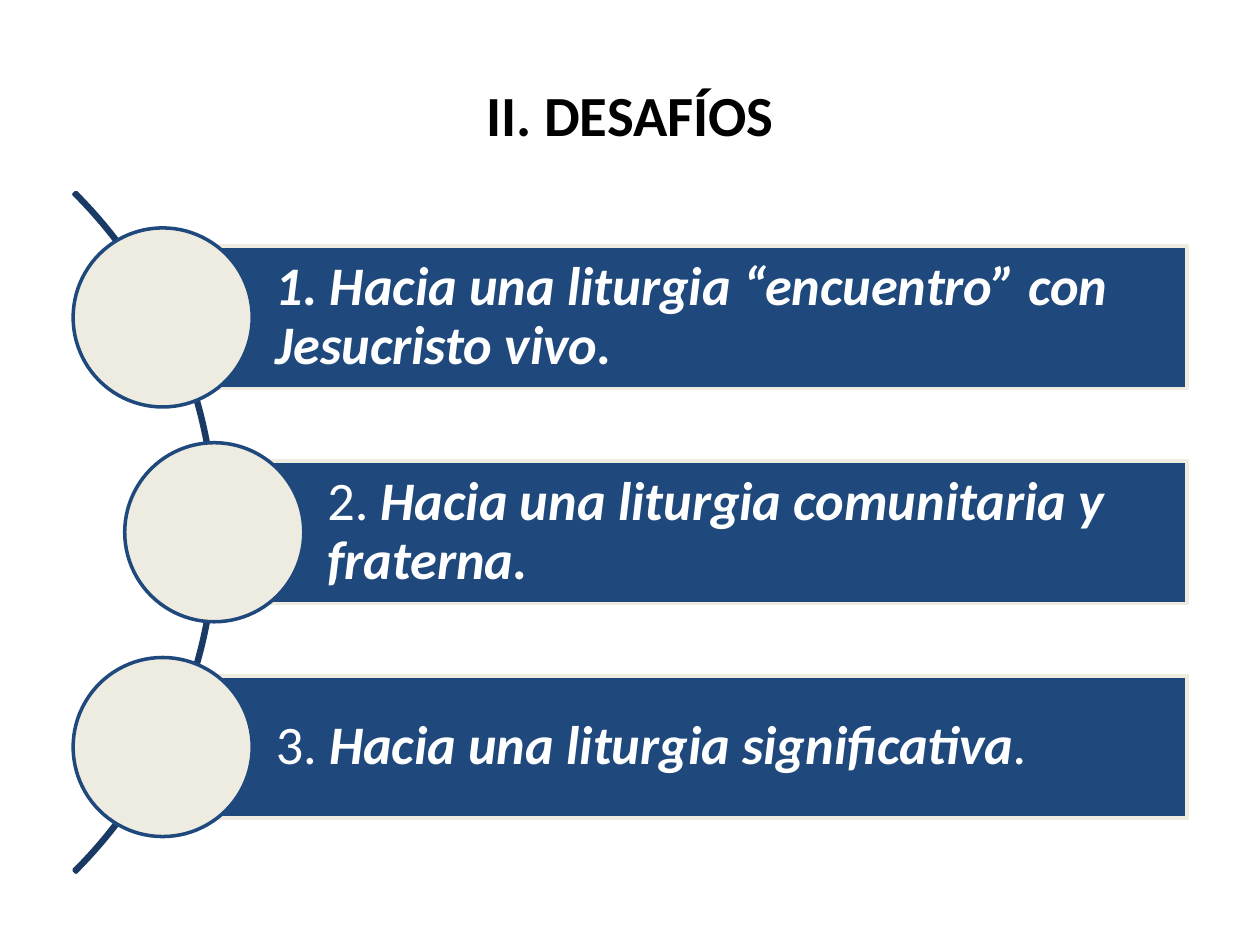
from dataclasses import dataclass

from pptx import Presentation
from pptx.dml.color import RGBColor
from pptx.enum.shapes import MSO_SHAPE as Shape
from pptx.enum.text import MSO_ANCHOR as Anchor, PP_ALIGN as Align
from pptx.util import Cm, Pt

COLORS = {"navy": "1F497D", "arc": "193A64", "cream": "EEECE1",
          "white": "FFFFFF", "black": "000000"}
PLAIN = {"name": "Calibri", "size": Pt(31), "bold": False, "italic": False}
STRONG = {**PLAIN, "bold": True, "italic": True}
TITLE = {**PLAIN, "size": Pt(32.4), "bold": True}

ARC_X, MID_Y, ARC_R = -5.32, 10.73, 9.69
PITCH, BAR_RIGHT, BAR_H, CIRCLE_D = 4.33, 23.93, 2.87, 3.61


@dataclass
class Challenge:
    x: float
    runs: list[tuple[str, dict]]


CHALLENGES = [
    Challenge(3.28, [("1. Hacia una liturgia “encuentro” con Jesucristo vivo.", STRONG)]),
    Challenge(4.32, [("2. ", PLAIN), ("Hacia una liturgia comunitaria y fraterna.", STRONG)]),
    Challenge(3.28, [("3. ", PLAIN), ("Hacia una liturgia significativa", STRONG),
                     (".", {**STRONG, "bold": False})]),
]


def rgb(name: str) -> RGBColor:
    return RGBColor.from_string(COLORS[name])


def add_run(p, text: str, font: dict, color: str) -> None:
    r = p.add_run()
    r.text = text
    for key, value in font.items():
        setattr(r.font, key, value)
    r.font.color.rgb = rgb(color)


def add_outlined(s, kind, x: float, y: float, w: float, h: float, line: str, fill: str = ""):
    sp = s.shapes.add_shape(kind, Cm(x), Cm(y), Cm(w), Cm(h))
    sp.shadow.inherit = False
    if fill:
        sp.fill.solid()
        sp.fill.fore_color.rgb = rgb(fill)
    else:
        sp.fill.background()
    sp.line.color.rgb = rgb(line)
    sp.line.width = Pt(2)
    return sp


def add_title(s, text: str) -> None:
    tf = s.shapes.add_textbox(Cm(1.27), Cm(0.7), Cm(22.86), Cm(3.18)).text_frame
    tf.word_wrap = True
    tf.vertical_anchor = Anchor.MIDDLE
    p = tf.paragraphs[0]
    p.alignment = Align.CENTER
    add_run(p, text, TITLE, "black")


def add_arc(s) -> None:
    sp = add_outlined(s, Shape.BLOCK_ARC, ARC_X - ARC_R, MID_Y - ARC_R,
                      2 * ARC_R, 2 * ARC_R, "arc")
    for i, value in enumerate((189, 27, 0.003)):
        sp.adjustments[i] = value


def add_challenge(s, item: Challenge, y: float) -> None:
    sp = add_outlined(s, Shape.RECTANGLE, item.x, y - BAR_H / 2,
                      BAR_RIGHT - item.x, BAR_H, "cream", "navy")
    tf = sp.text_frame
    frame = {"word_wrap": True, "vertical_anchor": Anchor.MIDDLE, "margin_left": Cm(2.28),
             "margin_right": Cm(0.22), "margin_top": Cm(0.22), "margin_bottom": Cm(0.22)}
    for key, value in frame.items():
        setattr(tf, key, value)
    p = tf.paragraphs[0]
    p.alignment = Align.LEFT
    p.line_spacing = 0.9
    for text, font in item.runs:
        add_run(p, text, font, "white")
    add_outlined(s, Shape.OVAL, item.x - CIRCLE_D / 2, y - CIRCLE_D / 2,
                 CIRCLE_D, CIRCLE_D, "navy", "cream")


def main() -> None:
    prs = Presentation()
    prs.slide_width, prs.slide_height = Cm(25.4), Cm(19.05)
    s = prs.slides.add_slide(prs.slide_layouts[6])
    add_title(s, "II. DESAFÍOS")
    add_arc(s)
    for i, item in enumerate(CHALLENGES):
        add_challenge(s, item, MID_Y + (i - 1) * PITCH)
    prs.save("out.pptx")


if __name__ == "__main__":
    main()
